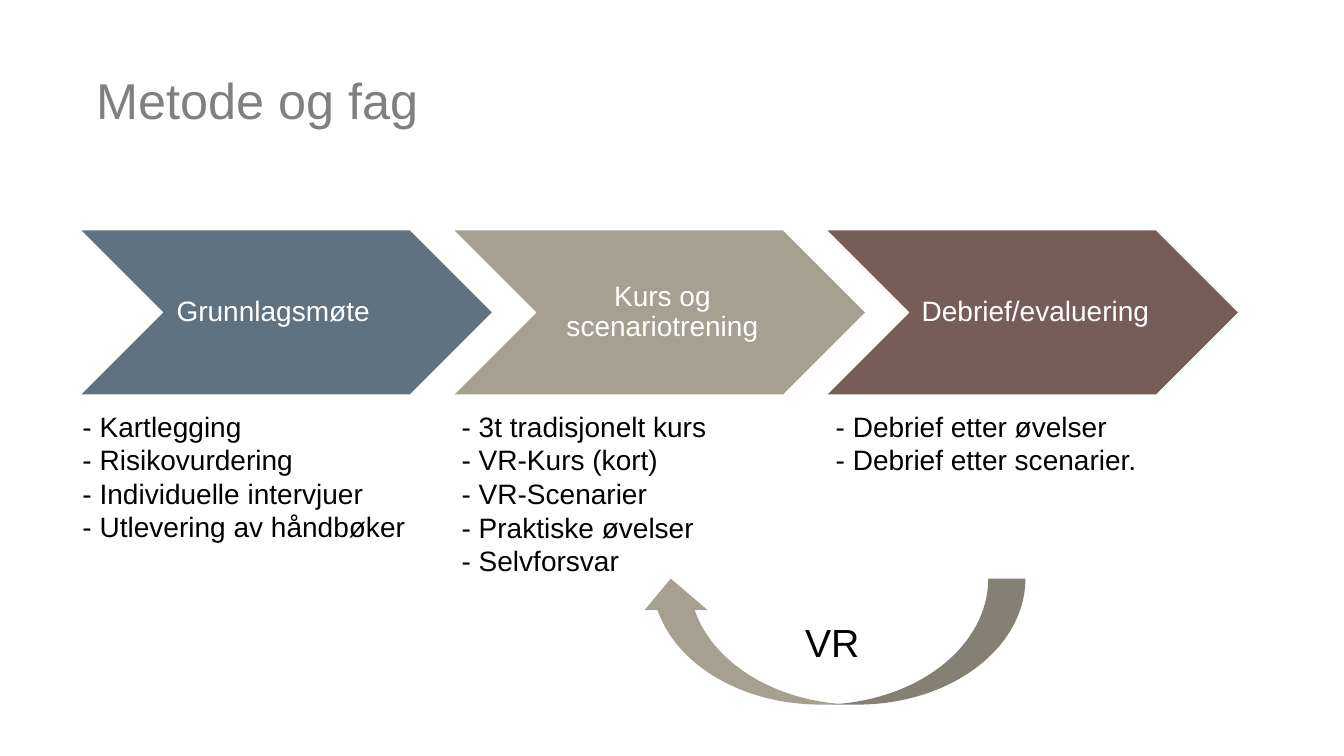
from pptx import Presentation
from pptx.dml.color import RGBColor
from pptx.enum.shapes import MSO_SHAPE
from pptx.enum.text import MSO_ANCHOR, MSO_AUTO_SIZE, PP_ALIGN
from pptx.util import Inches, Pt

CHEVRON, CURVED_ARROW = MSO_SHAPE.CHEVRON, MSO_SHAPE.CURVED_LEFT_ARROW
MIDDLE = MSO_ANCHOR.MIDDLE
LEFT, CENTER = PP_ALIGN.LEFT, PP_ALIGN.CENTER
GROW = MSO_AUTO_SIZE.SHAPE_TO_FIT_TEXT

FONT = "Arial"
COLORS = {
    "title": "808080",
    "text": "000000",
    "white": "FFFFFF",
    "meeting": "5F7281",
    "course": "A6A090",
    "debrief": "765D58",
}

# Label, colour, extra right inset of the label, left edge of the list, list
PHASES = [
    ("Grunnlagsmøte", "meeting", 0.32, 0.72,
     ["Kartlegging", "Risikovurdering", "Individuelle intervjuer",
      "Utlevering av håndbøker"]),
    ("Kurs og scenariotrening", "course", 0, 4.48,
     ["3t tradisjonelt kurs", "VR-Kurs (kort)", "VR-Scenarier",
      "Praktiske øvelser", "Selvforsvar"]),
    ("Debrief/evaluering", "debrief", 0, 8.19,
     ["Debrief etter øvelser", "Debrief etter scenarier."]),
]
PHASE_STEP = 3.7
LINE_HEIGHT = 0.335


def rgb(name):
    return RGBColor.from_string(COLORS[name])


def add_run(paragraph, text, size, color):
    run = paragraph.add_run()
    run.text = text
    run.font.name = FONT
    run.font.size = Pt(size)
    run.font.color.rgb = rgb(color)


def place_title(slide, text, left, top, width, height):
    title = slide.shapes.title
    title.left, title.top = Inches(left), Inches(top)
    title.width, title.height = Inches(width), Inches(height)
    frame = title.text_frame
    frame.vertical_anchor = MIDDLE
    paragraph = frame.paragraphs[0]
    paragraph.alignment = LEFT
    paragraph.line_spacing = 0.9
    add_run(paragraph, text, 36, "title")


def add_phase(slide, label, color, extra_inset, left, top, width, height):
    chevron = slide.shapes.add_shape(
        CHEVRON, Inches(left), Inches(top), Inches(width), Inches(height))
    chevron.shadow.inherit = False
    chevron.fill.solid()
    chevron.fill.fore_color.rgb = rgb(color)
    chevron.line.color.rgb = rgb("white")
    chevron.line.width = Pt(1)
    frame = chevron.text_frame
    frame.word_wrap = True
    frame.vertical_anchor = MIDDLE
    frame.margin_left = Inches(0.09)
    frame.margin_right = Inches(0.03 + extra_inset)
    frame.margin_top = frame.margin_bottom = Inches(0.03)
    paragraph = frame.paragraphs[0]
    paragraph.alignment = CENTER
    paragraph.line_spacing = 0.9
    add_run(paragraph, label, 20, "white")


def add_activities(slide, activities, left, top, width):
    height = 0.1 + LINE_HEIGHT * len(activities)
    box = slide.shapes.add_textbox(
        Inches(left), Inches(top), Inches(width), Inches(height))
    frame = box.text_frame
    frame.word_wrap = True
    frame.auto_size = GROW
    for index, activity in enumerate(activities):
        paragraph = frame.add_paragraph() if index else frame.paragraphs[0]
        add_run(paragraph, f"- {activity}", 20, "text")


def add_return_arrow(slide, label, left, top, width, height):
    """Curved arrow turned a quarter, with its label kept upright."""
    arrow = slide.shapes.add_shape(
        CURVED_ARROW, Inches(left), Inches(top), Inches(width), Inches(height))
    arrow.rotation = 90
    for index, value in enumerate((0.295, 0.5, 0.25)):
        arrow.adjustments[index] = value
    arrow.shadow.inherit = False
    arrow.fill.solid()
    arrow.fill.fore_color.rgb = rgb("course")
    arrow.line.fill.background()
    frame = arrow.text_frame
    frame.vertical_anchor = MIDDLE
    frame._txBody.bodyPr.set("vert", "vert270")
    paragraph = frame.paragraphs[0]
    paragraph.alignment = CENTER
    add_run(paragraph, label, 28, "text")


def main():
    deck = Presentation()
    deck.slide_width, deck.slide_height = Inches(13.33), Inches(7.5)
    slide = deck.slides.add_slide(deck.slide_layouts[5])
    place_title(slide, "Metode og fag", 0.86, 0.3, 11.5, 1.45)
    for index, (label, color, inset, list_left, activities) in enumerate(PHASES):
        add_phase(slide, label, color, inset,
                  0.79 + PHASE_STEP * index, 2.28, 4.1, 1.64)
        add_activities(slide, activities, list_left, 4.01, 3.57)
    add_return_arrow(slide, "VR", 7.63, 4.45, 1.25, 3.83)
    deck.save("out.pptx")


if __name__ == "__main__":
    main()
